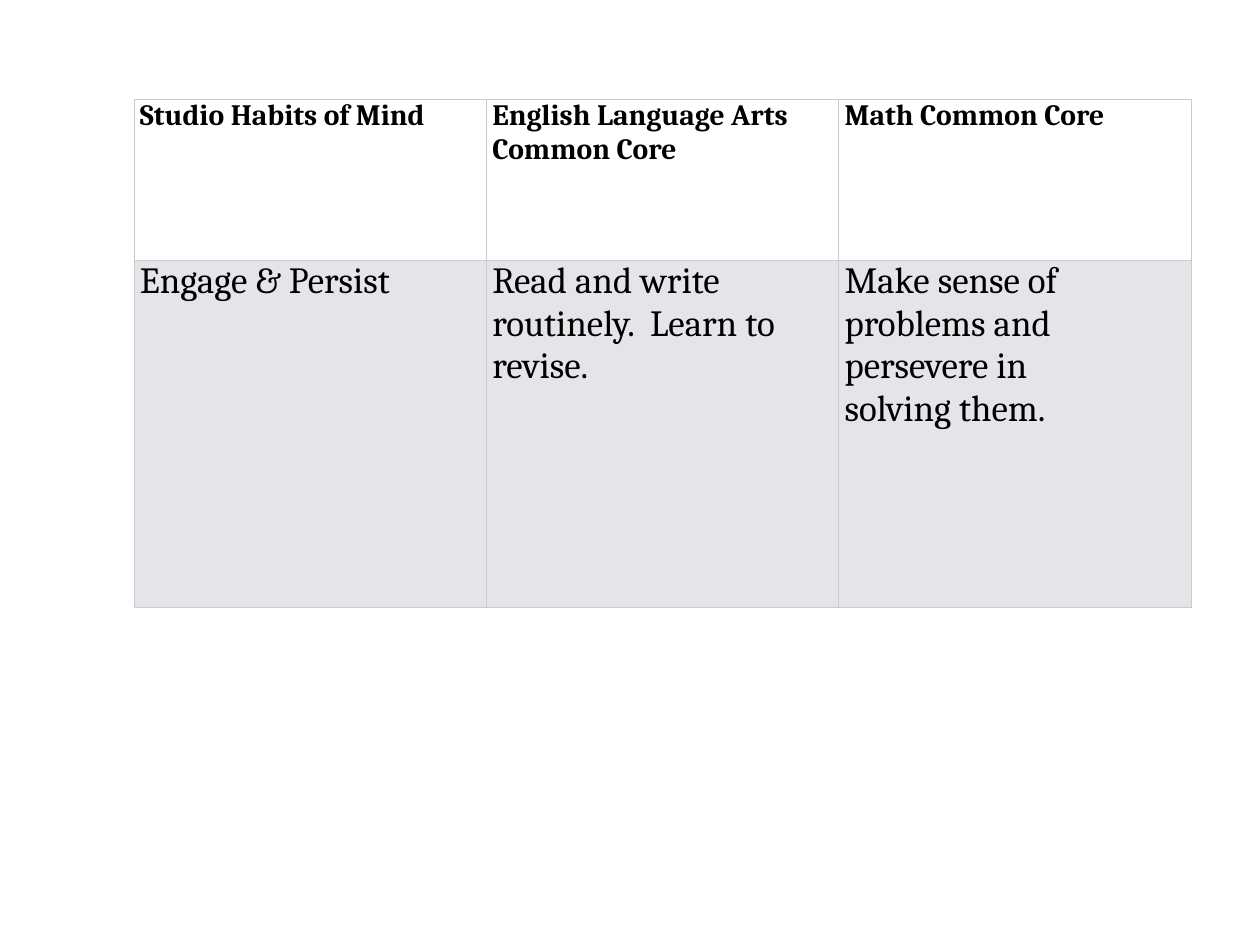
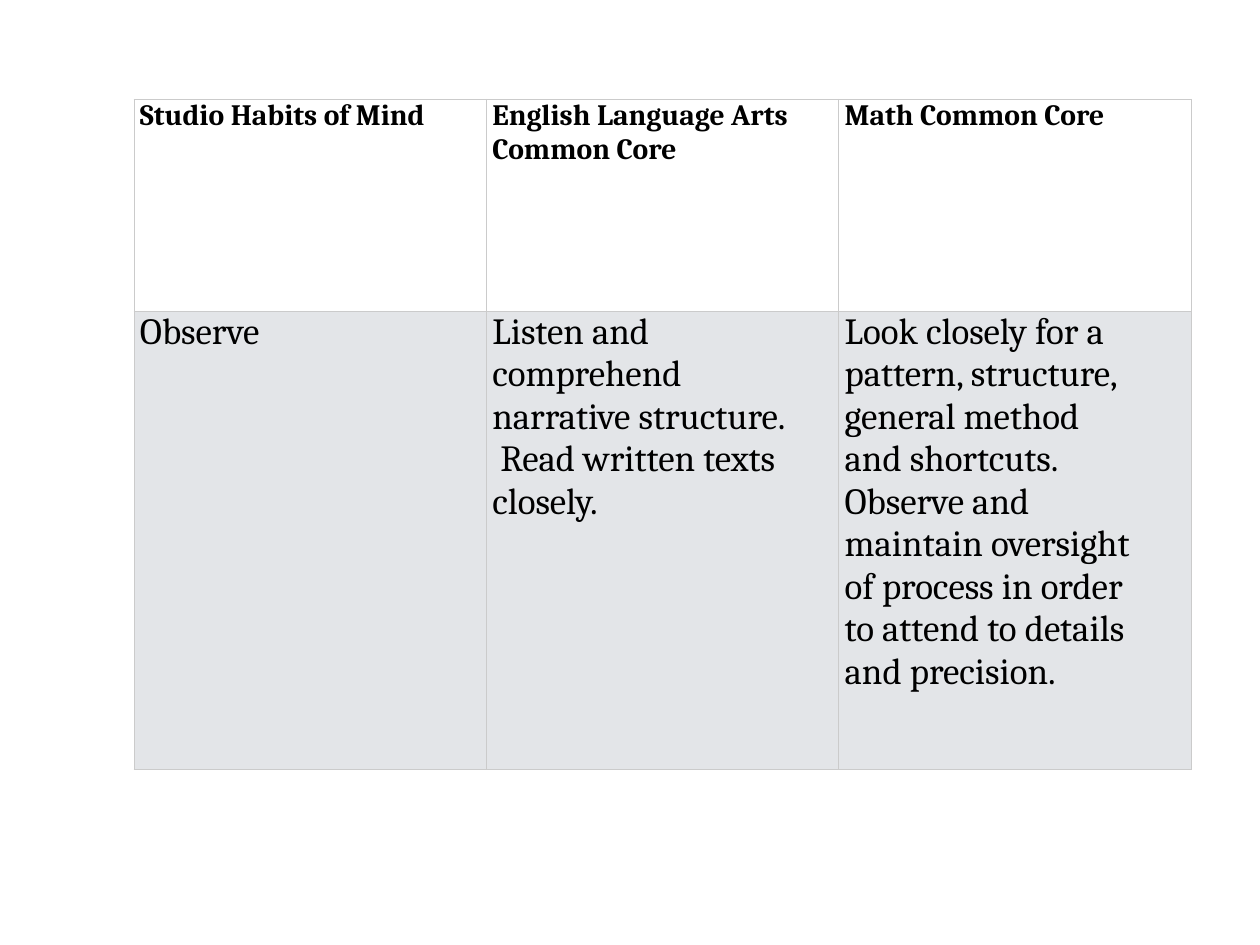
from dataclasses import dataclass

from lxml.etree import SubElement
from pptx import Presentation
from pptx.dml.color import RGBColor
from pptx.oxml.ns import qn
from pptx.presentation import Presentation as Deck
from pptx.table import _Cell as Cell
from pptx.util import Emu, Pt

# Shared look
FONT = "Cambria"
BLACK = RGBColor(0x00, 0x00, 0x00)
WHITE = RGBColor(0xFF, 0xFF, 0xFF)
PALE_GREY = RGBColor(0xE3, 0xE5, 0xE8)
BORDER_GREY = RGBColor(0xCB, 0xCB, 0xCB)
BORDER_WIDTH = Pt(0.5)

# Shared geometry, 100 px to the inch
PAGE_WIDTH, PAGE_HEIGHT = 1422, 1067
TABLE_LEFT, TABLE_TOP, TABLE_WIDTH = 151, 112, 1193
LEFT_MARGIN = 7

HEADINGS = (
    "Studio Habits of Mind",
    "English Language Arts Common Core",
    "Math Common Core",
)


@dataclass(frozen=True)
class RowStyle:
    size: int
    bold: bool
    fill: RGBColor
    right_margin: int


@dataclass(frozen=True)
class HabitPage:
    row_heights: tuple[int, int]
    standards: tuple[str, str, str]


ROW_STYLES = (RowStyle(24, True, WHITE, 7), RowStyle(30, False, PALE_GREY, 58))

PAGES = (
    HabitPage(
        (182, 392),
        (
            "Engage & Persist",
            "Read and write routinely.  Learn to revise.",
            "Make sense of problems and persevere in solving them.",
        ),
    ),
    HabitPage(
        (239, 518),
        (
            "Observe",
            # A no-break space stands before "Read"
            "Listen and comprehend narrative structure.  Read written texts closely.",
            "Look closely for a pattern, structure, general method and shortcuts.  "
            "Observe and maintain oversight of process in order to attend to "
            "details and precision.",
        ),
    ),
)


def px(length: int) -> Emu:
    return Emu(length * 9144)


def add_borders(cell: Cell) -> None:
    properties = cell._tc.get_or_add_tcPr()
    for side in ("a:lnL", "a:lnR", "a:lnT", "a:lnB"):
        line = SubElement(properties, qn(side), w=str(BORDER_WIDTH))
        fill = SubElement(line, qn("a:solidFill"))
        SubElement(fill, qn("a:srgbClr"), val=str(BORDER_GREY))


def fill_cell(cell: Cell, text: str, style: RowStyle) -> None:
    add_borders(cell)
    cell.fill.solid()
    cell.fill.fore_color.rgb = style.fill
    cell.margin_left = px(LEFT_MARGIN)
    cell.margin_right = px(style.right_margin)
    cell.margin_top = cell.margin_bottom = 0
    cell.text_frame.text = text
    font = cell.text_frame.paragraphs[0].runs[0].font
    font.name = FONT
    font.size = Pt(style.size)
    font.bold = style.bold
    font.color.rgb = BLACK


def add_habit_page(deck: Deck, content: HabitPage) -> None:
    page = deck.slides.add_slide(deck.slide_layouts[6])
    rows = (HEADINGS, content.standards)
    # The new table shares its width equally among the columns
    table = page.shapes.add_table(
        len(rows), len(HEADINGS),
        px(TABLE_LEFT), px(TABLE_TOP),
        px(TABLE_WIDTH), px(sum(content.row_heights)),
    ).table
    table.horz_banding = False
    for row, height, texts, style in zip(
        table.rows, content.row_heights, rows, ROW_STYLES
    ):
        row.height = px(height)
        for cell, text in zip(row.cells, texts):
            fill_cell(cell, text, style)


def main() -> None:
    deck = Presentation()
    deck.slide_width, deck.slide_height = px(PAGE_WIDTH), px(PAGE_HEIGHT)
    for content in PAGES:
        add_habit_page(deck, content)
    deck.save("out.pptx")


if __name__ == "__main__":
    main()
